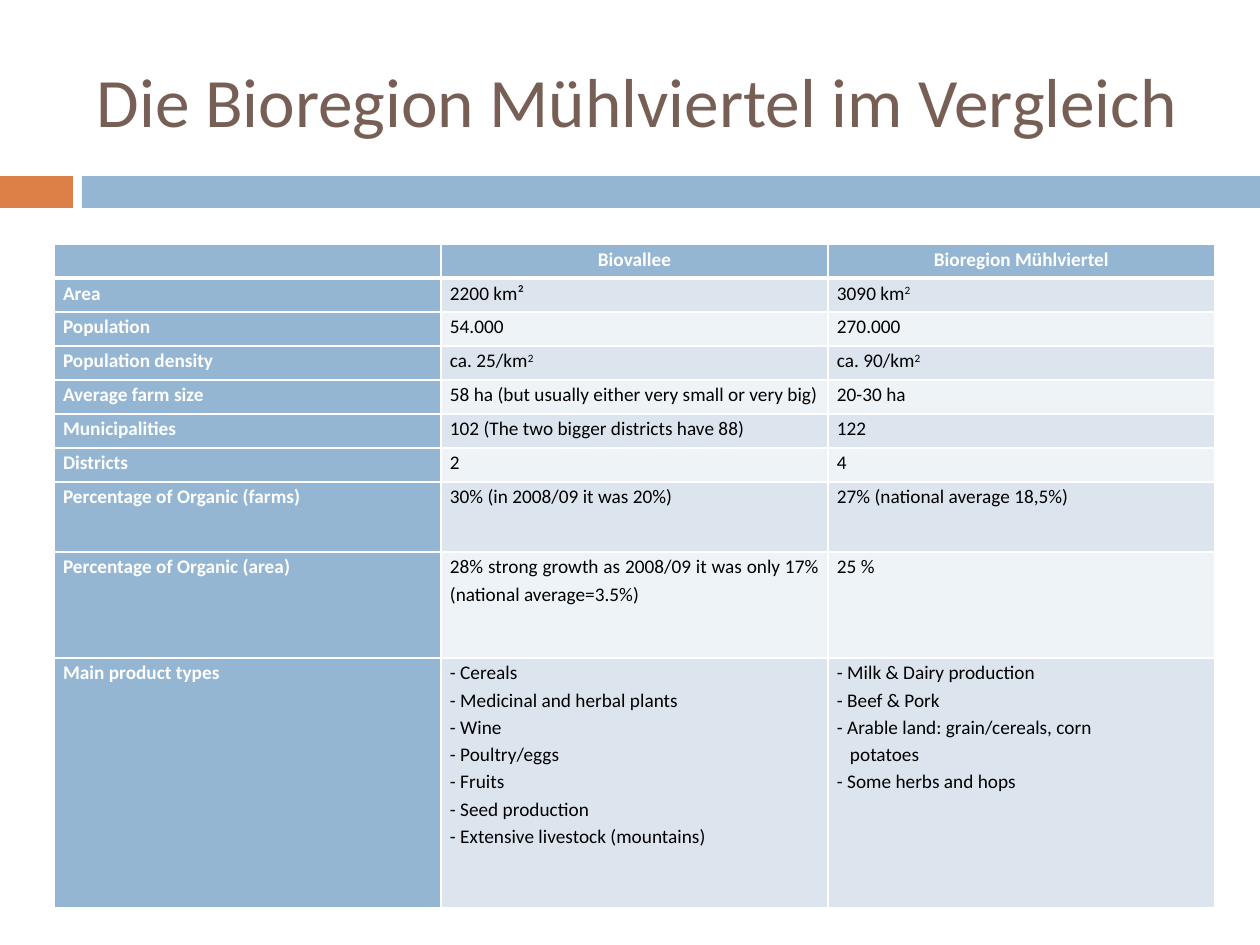
from lxml.etree import SubElement
from pptx import Presentation
from pptx.dml.color import RGBColor
from pptx.enum.shapes import MSO_SHAPE as Shape
from pptx.enum.text import MSO_ANCHOR as Anchor, MSO_AUTO_SIZE as AutoSize, PP_ALIGN as Align
from pptx.oxml import parse_xml
from pptx.oxml.ns import nsdecls, qn
from pptx.util import Emu, Pt

EMU_PER_PX = 914400 / 126
FONT = "Calibri"
TABLE_SIZE = 11
COLORS = {
    "title": "775F55",
    "accent": "DD8047",
    "header": "94B6D2",
    "band_dark": "DCE5EE",
    "band_light": "EEF3F7",
    "white": "FFFFFF",
    "text": "000000",
}

# "^" starts a superscript; ">" marks a line that continues the item above.
COMPARISON = [
    ("", "Biovallee", "Bioregion Mühlviertel"),
    ("Area", "2200 km²", "3090 km^2"),
    ("Population", "54.000", "270.000"),
    ("Population density", "ca. 25/km^2", "ca. 90/km^2"),
    ("Average farm size", "58 ha (but usually either very small or very big)", "20-30 ha"),
    ("Municipalities", "102 (The two bigger districts have 88)", "122"),
    ("Districts", "2", "4"),
    ("Percentage of Organic (farms)", "30% (in 2008/09 it was 20%)",
     "27% (national average 18,5%)"),
    ("Percentage of Organic (area)",
     "28% strong growth as 2008/09 it was only 17% (national average=3.5%)", "25 %"),
    ("Main product types",
     "- Cereals\n- Medicinal and herbal plants\n- Wine\n- Poultry/eggs\n- Fruits\n"
     "- Seed production\n- Extensive livestock (mountains)",
     "- Milk & Dairy production\n- Beef & Pork\n- Arable land: grain/cereals, corn\n"
     ">potatoes\n- Some herbs and hops"),
]
ROW_HEIGHTS = [34] * 7 + [70, 106, 250]
COLUMN_WIDTH = 387


def px(length):
    return Emu(round(length * EMU_PER_PX))


def rgb(name):
    return RGBColor.from_string(COLORS[name])


def add_run(paragraph, text, size, color, bold=False):
    run = paragraph.add_run()
    run.text = text
    run.font.name = FONT
    run.font.size = Pt(size)
    run.font.bold = bold
    run.font.color.rgb = rgb(color)
    return run


def add_bar(slide, left, width, color):
    bar = slide.shapes.add_shape(Shape.RECTANGLE, px(left), px(176), px(width), px(32))
    bar.shadow.inherit = False
    bar.fill.solid()
    bar.fill.fore_color.rgb = rgb(color)
    bar.line.fill.background()


def set_title(slide, text):
    title = slide.shapes.title
    title.left, title.top, title.width, title.height = map(px, (84, 32, 1124, 136))
    frame = title.text_frame
    frame.word_wrap = True
    frame.auto_size = AutoSize.NONE
    frame.vertical_anchor = Anchor.MIDDLE
    heading = frame.paragraphs[0]
    heading.alignment = Align.LEFT
    add_run(heading, text, 39.6, "title")


def set_borders(cell, bottom_width):
    """Draw white lines around a cell; they must come before its fill."""
    widths = {"lnL": 1, "lnR": 1, "lnT": 1, "lnB": bottom_width}
    properties = cell._tc.get_or_add_tcPr()
    for position, (side, width) in enumerate(widths.items()):
        properties.insert(position, parse_xml(
            f'<a:{side} {nsdecls("a")} w="{Pt(width)}"><a:solidFill>'
            f'<a:srgbClr val="{COLORS["white"]}"/></a:solidFill></a:{side}>'))


def write_line(paragraph, line, color, bold, alignment):
    paragraph.alignment = alignment
    paragraph.line_spacing = 1.15
    if line.startswith(">"):
        paragraph._p.get_or_add_pPr().set("marL", str(px(13)))
        line = line[1:]
    base, _, superscript = line.partition("^")
    if base:
        add_run(paragraph, base, TABLE_SIZE, color, bold)
    else:
        SubElement(paragraph._p, qn("a:endParaRPr"), sz=str(TABLE_SIZE * 100))
    if superscript:
        raised = add_run(paragraph, superscript, TABLE_SIZE, color, bold)
        raised.font._element.set("baseline", "30000")


def fill_cell(cell, text, row, column):
    is_heading = row == 0 or column == 0
    if is_heading:
        fill, color = "header", "white"
        alignment = Align.CENTER if row == 0 else Align.LEFT
    else:
        fill, color = "band_dark" if row % 2 else "band_light", "text"
        alignment = Align.JUSTIFY
    cell.margin_left = cell.margin_right = px(9)
    cell.margin_top = cell.margin_bottom = 0
    cell.fill.solid()
    cell.fill.fore_color.rgb = rgb(fill)
    set_borders(cell, 3 if row == 0 else 1)
    frame = cell.text_frame
    for index, line in enumerate(text.split("\n")):
        paragraph = frame.add_paragraph() if index else frame.paragraphs[0]
        write_line(paragraph, line, color, is_heading, alignment)


def add_comparison(slide):
    columns = len(COMPARISON[0])
    table = slide.shapes.add_table(
        len(COMPARISON), columns, px(54), px(244),
        px(COLUMN_WIDTH * columns), px(sum(ROW_HEIGHTS))).table
    for column in table.columns:
        column.width = px(COLUMN_WIDTH)
    for row, (height, texts) in enumerate(zip(ROW_HEIGHTS, COMPARISON)):
        table.rows[row].height = px(height)
        for column, text in enumerate(texts):
            fill_cell(table.cell(row, column), text, row, column)


def main():
    deck = Presentation()
    deck.slide_width, deck.slide_height = px(1260), px(945)
    slide = deck.slides.add_slide(deck.slide_layouts.get_by_name("Title Only"))
    add_bar(slide, 0, 73, "accent")
    add_bar(slide, 82, 1178, "header")
    set_title(slide, "Die Bioregion Mühlviertel im Vergleich")
    add_comparison(slide)
    deck.save("out.pptx")


if __name__ == "__main__":
    main()
